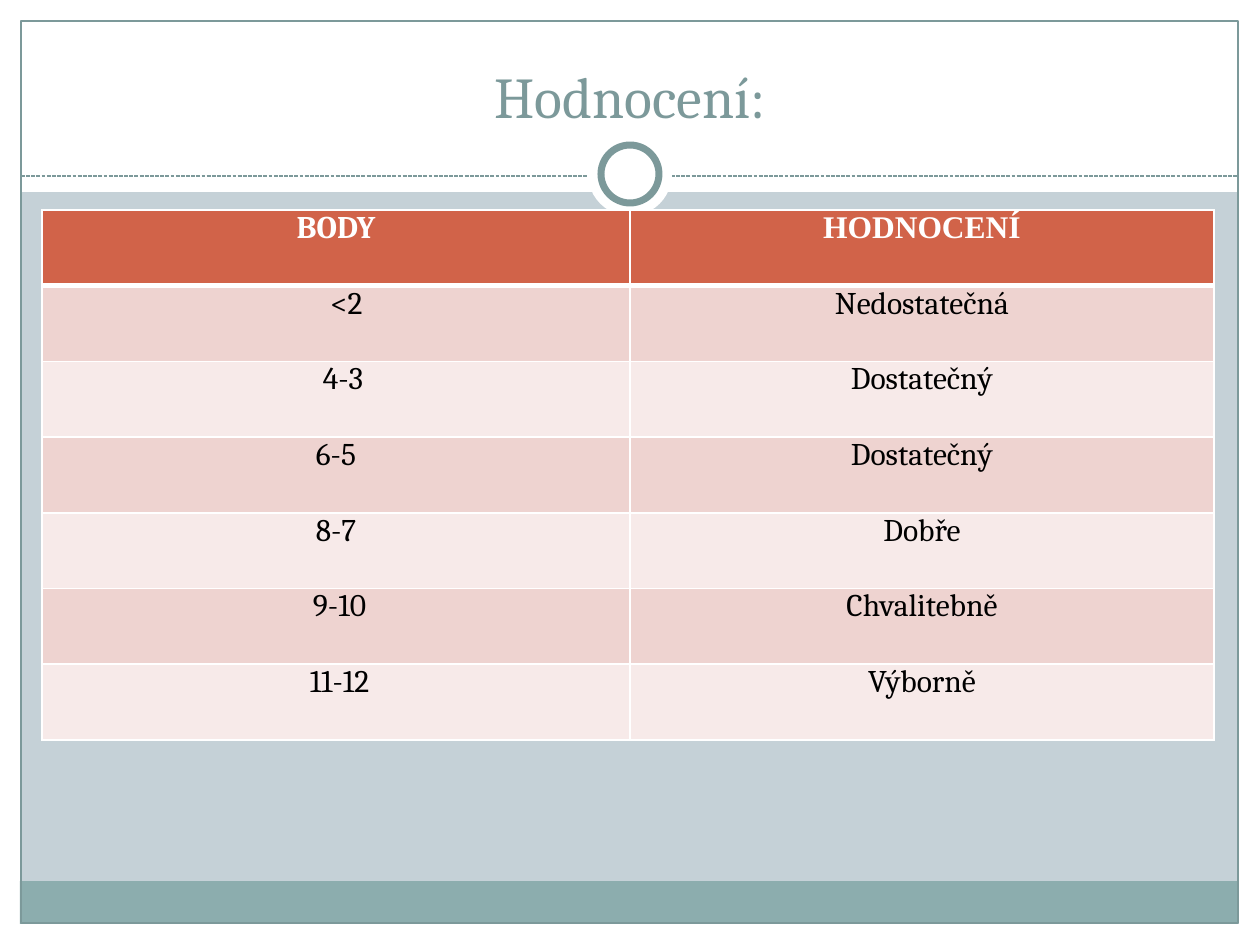
from lxml.etree import SubElement as Sub
from pptx import Presentation
from pptx.dml.color import RGBColor
from pptx.enum.dml import MSO_LINE as Dash
from pptx.enum.shapes import MSO_CONNECTOR as Conn, MSO_SHAPE as Kind
from pptx.enum.text import MSO_ANCHOR as Anchor, PP_ALIGN as Align
from pptx.oxml.ns import qn
from pptx.util import Emu, Pt

WIDE, HIGH = 1260, 945
WHITE, TEAL, BLACK = "FFFFFF", "7C999A", "000000"
SERIF, TIMES = "Cambria", "Times New Roman"


def px(n):
    return Emu(round(n * 914400 / 126))


def color(code):
    return RGBColor.from_string(code)


class Deck:
    def __init__(self, back):
        self.prs = Presentation()
        self.prs.slide_width, self.prs.slide_height = px(WIDE), px(HIGH)
        self.slide = self.prs.slides.add_slide(self.prs.slide_layouts[6])
        fill = self.slide.background.fill
        fill.solid()
        fill.fore_color.rgb = color(back)

    def shape(self, kind, box, fill=None, line=None, width=0.75):
        item = self.slide.shapes.add_shape(kind, *map(px, box))
        item.shadow.inherit = False
        if fill:
            item.fill.solid()
            item.fill.fore_color.rgb = color(fill)
        else:
            item.fill.background()
        if line:
            item.line.color.rgb = color(line)
            item.line.width = Pt(width)
        else:
            item.line.fill.background()

    def rule(self, left, right, y, tint):
        item = self.slide.shapes.add_connector(
            Conn.STRAIGHT, px(left), px(y), px(right), px(y))
        item.line.color.rgb = color(tint)
        item.line.width = Pt(0.75)
        item.line.dash_style = Dash.SQUARE_DOT
        Sub(item._element.spPr, qn("a:effectLst"))

    def text(self, para, words, size, tint, font=SERIF, bold=False):
        para.alignment = Align.CENTER
        run = para.add_run()
        run.text = words
        run.font.size, run.font.name, run.font.bold = Pt(size), font, bold
        run.font.color.rgb = color(tint)

    def title(self, box, words):
        frame = self.slide.shapes.add_textbox(*map(px, box)).text_frame
        frame.word_wrap = True
        frame.vertical_anchor = Anchor.BOTTOM
        self.text(frame.paragraphs[0], words, 33, TEAL)

    def border(self, cell, side, width):
        line = Sub(cell._tc.get_or_add_tcPr(), qn("a:ln" + side), w=str(Pt(width)))
        fill = Sub(line, qn("a:solidFill"))
        Sub(fill, qn("a:srgbClr"), val=WHITE)

    def cell(self, cell, words, fill, tint, font, bold, indent, rules):
        cell.margin_left = cell.margin_right = px(9)
        cell.margin_top = cell.margin_bottom = 0
        for side, width in rules.items():
            self.border(cell, side, width)
        cell.fill.solid()
        cell.fill.fore_color.rgb = color(fill)
        para = cell.text_frame.paragraphs[0]
        if indent:
            para._p.get_or_add_pPr().set("marL", str(px(indent)))
        self.text(para, words, 18, tint, font, bold)

    def table(self, box, cols, head, rows):
        grid = self.slide.shapes.add_table(
            len(rows) + 1, len(cols), *map(px, box)).table
        for col, width in zip(grid.columns, cols):
            col.width = px(width)
        thin = dict.fromkeys("LRTB", 1)
        for c, (words, font) in enumerate(head):
            self.cell(grid.cell(0, c), words, "D16349", WHITE, font, True, 0,
                      thin | {"B": 3})
        for r, (score, grade, indent) in enumerate(rows, 1):
            fill = "EED3D0" if r % 2 else "F7EAE9"
            rules = thin | {"T": 3 if r == 1 else 1}
            for c, (words, shift) in enumerate([(score, indent), (grade, 0)]):
                self.cell(grid.cell(r, c), words, fill, BLACK, SERIF, False,
                          shift, rules)


def main():
    deck = Deck("C5D1D7")

    # White margins and header band
    for box in [(0, 924, WIDE, 21), (0, 0, WIDE, 192),
                (0, 0, 21, HIGH), (1239, 0, 21, HIGH)]:
        deck.shape(Kind.RECTANGLE, box, WHITE)

    # Footer band, frame and dashed rule
    deck.shape(Kind.RECTANGLE, (20, 881, 1218, 43), "8CADAE")
    deck.shape(Kind.RECTANGLE, (21, 21, 1217, 902), line=TEAL)
    deck.rule(21, 1239, 176, TEAL)

    # Ring
    deck.shape(Kind.OVAL, (588, 132, 84, 84), WHITE)
    deck.shape(Kind.OVAL, (601, 145, 58, 58), WHITE, TEAL, 4)

    deck.title((42, 31, 1176, 105), "Hodnocení:")

    # Grading table: score, grade, indent of the score
    head = [("BODY", SERIF), ("HODNOCENÍ", TIMES)]
    rows = [
        ("<2", "Nedostatečná", 21),
        ("4-3", "Dostatečný", 14),
        ("6-5", "Dostatečný", 0),
        ("8-7", "Dobře", 0),
        ("9-10", "Chvalitebně", 7),
        ("11-12", "Výborně", 7),
    ]
    deck.table((42, 210, 1172, 530), (588, 584), head, rows)

    deck.prs.save("out.pptx")


if __name__ == "__main__":
    main()
